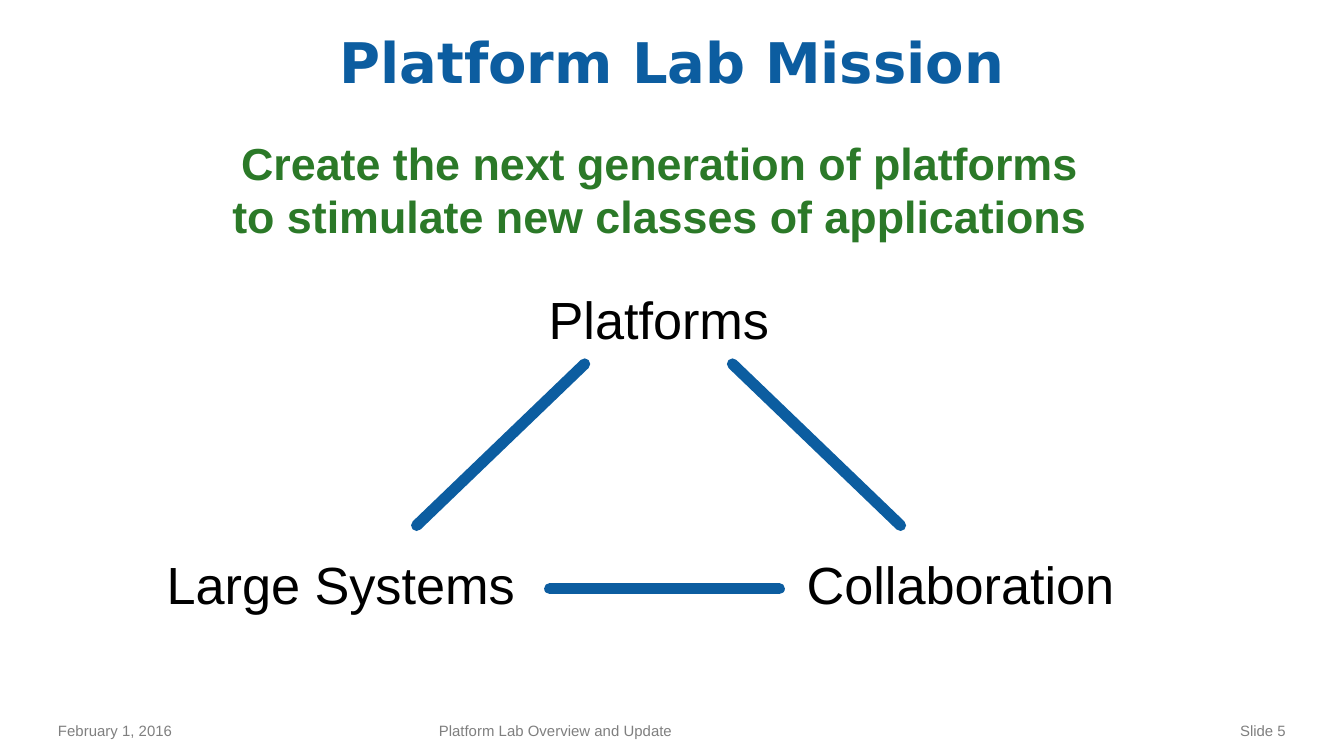
from dataclasses import dataclass
from lxml.etree import SubElement
from pptx import Presentation
from pptx.dml.color import RGBColor
from pptx.enum.shapes import MSO_CONNECTOR
from pptx.enum.text import MSO_ANCHOR, PP_ALIGN
from pptx.oxml.ns import qn
from pptx.util import Pt


@dataclass(frozen=True)
class Theme:
    blue: str = "0C5DA0"
    green: str = "2B7928"
    black: str = "000000"
    gray: str = "7F7F7F"
    head: str = "DejaVu Sans"
    body: str = "Arial"
    title: int = 30
    motto: int = 24
    label: int = 28
    foot: int = 8
    line: int = 6


THEME = Theme()


def write(shape, text, size, color, align=PP_ALIGN.CENTER, face=THEME.body, bold=False):
    shape.text_frame.text = text
    para = shape.text_frame.paragraphs[0]
    para.alignment = align
    font = para.font
    font.name, font.size, font.bold = face, Pt(size), bold
    font.color.rgb = RGBColor.from_string(color)


def add_text(slide, box, text, size, color, inset=(7.2, 3.6), anchor=MSO_ANCHOR.TOP,
             wrap=False, **style):
    shape = slide.shapes.add_textbox(*map(Pt, box))
    frame = shape.text_frame
    frame.word_wrap = wrap
    frame.vertical_anchor = anchor
    frame.margin_left = frame.margin_right = Pt(inset[0])
    frame.margin_top = frame.margin_bottom = Pt(inset[1])
    write(shape, text, size, color, **style)


def add_edge(slide, start, end):
    edge = slide.shapes.add_connector(MSO_CONNECTOR.STRAIGHT, *map(Pt, start + end))
    edge.line.width = Pt(THEME.line)
    edge.line.color.rgb = RGBColor.from_string(THEME.blue)
    edge.get_or_add_ln().set("cap", "rnd")
    SubElement(edge.element.spPr, qn("a:effectLst"))


def add_title(slide, box, text):
    title = slide.shapes.title
    title.left, title.top, title.width, title.height = map(Pt, box)
    title.text_frame.vertical_anchor = MSO_ANCHOR.MIDDLE
    write(title, text, THEME.title, THEME.blue, face=THEME.head, bold=True)


def add_motto(slide, box, text):
    add_text(slide, box, text, THEME.motto, THEME.green, bold=True)


def add_triad(slide, box):
    left, top, width, height = box
    tall = 34
    low = top + height - tall
    labels = [
        ("Platforms", left + 205, top, 120),
        ("Large Systems", left, low, 189),
        ("Collaboration", left + width - 167, low, 167),
    ]
    for text, x, y, wide in labels:
        add_text(slide, (x, y, wide, tall), text, THEME.label, THEME.black, inset=(0, 0))

    mid = left + 264.8
    for side in (-1, 1):
        add_edge(slide, (mid + side * 39.6, top + 41), (mid + side * 129.6, top + 127.5))
    base = top + 161.4
    add_edge(slide, (left + 206.5, base), (left + 329.5, base))


def add_footer(slide, box):
    left, top, width, height = box
    parts = [
        ("February 1, 2016", 0, 180, PP_ALIGN.LEFT),
        ("Platform Lab Overview and Update", 204, 270, PP_ALIGN.LEFT),
        ("Slide 5", width - 180, 180, PP_ALIGN.RIGHT),
    ]
    for text, x, wide, align in parts:
        add_text(slide, (left + x, top, wide, height), text, THEME.foot, THEME.gray,
                 anchor=MSO_ANCHOR.MIDDLE, wrap=True, align=align)


def main():
    deck = Presentation()
    deck.slide_width, deck.slide_height = Pt(720), Pt(405)
    slide = deck.slides.add_slide(deck.slide_layouts[5])
    add_footer(slide, (24, 383, 672, 17))
    add_title(slide, (24, 11.5, 672, 43), "Platform Lab Mission")
    add_triad(slide, (88, 154, 510, 176))
    add_motto(slide, (115.2, 69, 476, 65.5),
              "Create the next generation of platforms\vto stimulate new classes of applications")
    deck.save("out.pptx")


if __name__ == "__main__":
    main()
